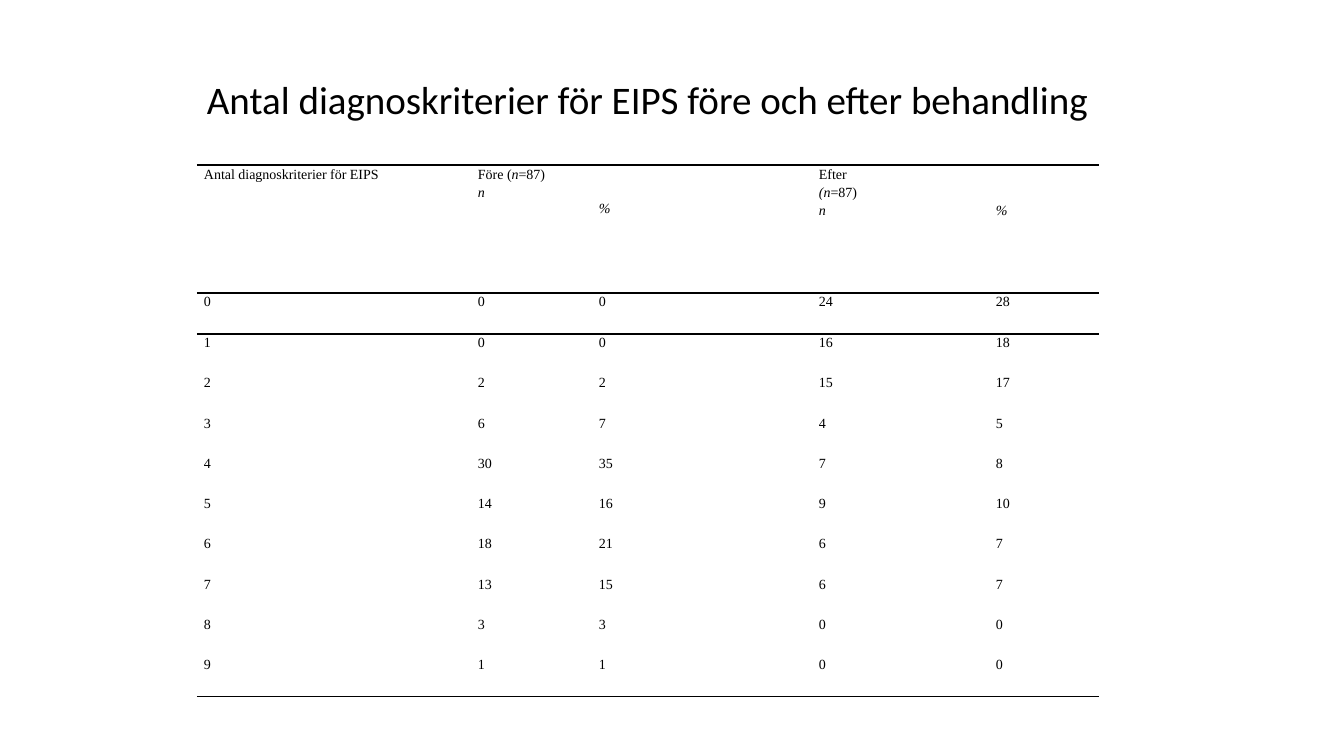
from lxml.etree import SubElement
from pptx import Presentation
from pptx.dml.color import RGBColor
from pptx.enum.text import MSO_ANCHOR
from pptx.oxml.ns import qn
from pptx.util import Pt

SCALE = 914400 / 100.8
BLACK = "000000"
NO_STYLE = "{2D5ABB26-0587-4C30-8999-92F81FD0307C}"
TITLE = "Antal diagnoskriterier för EIPS före och efter behandling"
COL_WIDTHS = [274, 121, 220, 177, 110]
ROW_HEIGHTS = [128, 41, 40, 41, 40, 40, 40, 41, 40, 40, 41]
HEADER = ["Antal diagnoskriterier för EIPS", "Före (*n*=87)\n*n*", "*%*",
          "Efter\n*(n*=87)\n*n*", "*%*"]
HEADER_TOPS = [0, 0, 34, 0, 36]
COUNTS = [
    (0, 0, 0, 24, 28),
    (1, 0, 0, 16, 18),
    (2, 2, 2, 15, 17),
    (3, 6, 7, 4, 5),
    (4, 30, 35, 7, 8),
    (5, 14, 16, 9, 10),
    (6, 18, 21, 6, 7),
    (7, 13, 15, 6, 7),
    (8, 3, 3, 0, 0),
    (9, 1, 1, 0, 0),
]


def px(n):
    """Turn px into EMU."""
    return round(n * SCALE)


def color(value):
    """Turn a hex string into a colour."""
    return RGBColor.from_string(value)


def write(tf, text, size=10, font="Times New Roman", fill=BLACK, spacing=1.0):
    """Write lines of text, with the parts between asterisks in italics."""
    for i, line in enumerate(text.split("\n")):
        p = tf.add_paragraph() if i else tf.paragraphs[0]
        p.line_spacing = spacing
        for j, part in enumerate(line.split("*")):
            if part:
                r = p.add_run()
                r.text = part
                r.font.size = Pt(size)
                r.font.name = font
                r.font.italic = j % 2 == 1
                r.font.color.rgb = color(fill)


def set_border(cell, side, fill=BLACK):
    """Draw a 1 pt line along one side of a cell."""
    ln = SubElement(cell._tc.get_or_add_tcPr(), qn(f"a:ln{side}"), w=str(Pt(1)))
    SubElement(SubElement(ln, qn("a:solidFill")), qn("a:srgbClr"), val=fill)


def add_title(s, x, y, w, h):
    """Place the slide title, centred vertically in its box."""
    tf = s.shapes.add_textbox(px(x), px(y), px(w), px(h)).text_frame
    tf.word_wrap = True
    tf.vertical_anchor = MSO_ANCHOR.MIDDLE
    write(tf, TITLE, size=27.9, font="Calibri", spacing=0.9)


def add_criteria_table(s, x, y):
    """Place the table of criteria before and after treatment."""
    rows = [HEADER, *COUNTS]
    frame = s.shapes.add_table(len(rows), len(HEADER), px(x), px(y),
                               px(sum(COL_WIDTHS)), px(sum(ROW_HEIGHTS)))
    table = frame.table
    table.horz_banding = False
    table._tbl.tblPr.find(qn("a:tableStyleId")).text = NO_STYLE
    for col, width in zip(table.columns, COL_WIDTHS):
        col.width = px(width)
    last = len(rows) - 1
    for i, values in enumerate(rows):
        table.rows[i].height = px(ROW_HEIGHTS[i])
        for j, value in enumerate(values):
            cell = table.cell(i, j)
            cell.margin_left = cell.margin_right = px(7)
            cell.margin_top = px(0 if i else HEADER_TOPS[j])
            cell.margin_bottom = 0
            write(cell.text_frame, str(value), spacing=1.07 if i else 1.15)
            if i <= 1:
                set_border(cell, "T")
            if i in (0, last):
                set_border(cell, "B")
            cell.fill.background()


def main():
    """Build the slide and save it."""
    prs = Presentation()
    prs.slide_width, prs.slide_height = px(1344), px(756)
    s = prs.slides.add_slide(prs.slide_layouts[6])
    add_title(s, 197, 17, 1054, 169)
    add_criteria_table(s, 197, 165)
    prs.save("out.pptx")


if __name__ == "__main__":
    main()
